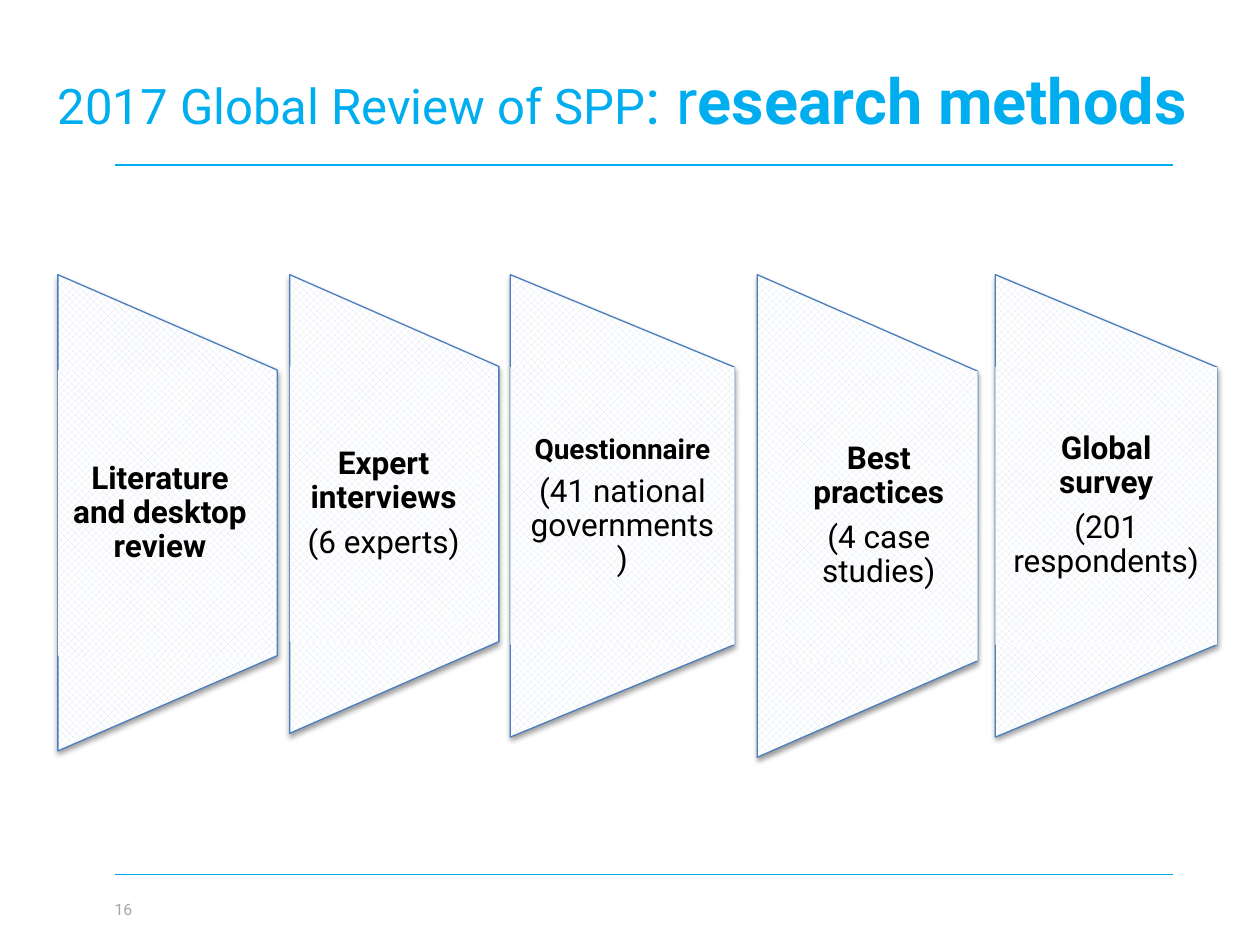
import pptx
import pptx.util
import pptx.dml.color
import pptx.enum.dml
import pptx.enum.shapes
import pptx.enum.text
import lxml.etree
from dataclasses import dataclass
from pptx.util import Inches


@dataclass(frozen=True)
class Theme:
    font: str = "Roboto"
    accent: str = "00AEEF"
    outline: str = "4B7EBC"
    pattern: str = "DCE6F2"
    paper: str = "FFFFFF"
    ink: str = "000000"
    muted: str = "A6A6A6"
    title_size: int = 28
    emphasis_size: int = 36
    label_size: int = 18
    small_label_size: int = 16
    number_size: int = 9


def rgb(value):
    return pptx.dml.color.RGBColor.from_string(value)


class SlideBuilder:
    def __init__(self, page, theme):
        self.page = page
        self.theme = theme

    def style(self, font, size, color, bold=False):
        font.name = self.theme.font
        font.size = pptx.util.Pt(size)
        font.bold = bold
        font.color.rgb = rgb(color)

    def frame(self, box, anchor, side, edge):
        frame = box.text_frame
        frame.word_wrap = True
        frame.auto_size = pptx.enum.text.MSO_AUTO_SIZE.NONE
        frame.vertical_anchor = anchor
        frame.margin_left = frame.margin_right = Inches(side)
        frame.margin_top = frame.margin_bottom = Inches(edge)
        return frame

    def title(self, spans):
        box = self.page.shapes.title
        box.left, box.top = Inches(0.46), Inches(0.33)
        box.width, box.height = Inches(9.39), Inches(1.31)
        frame = self.frame(box, pptx.enum.text.MSO_ANCHOR.TOP, 0, 0.16)
        para = frame.paragraphs[0]
        para.alignment = pptx.enum.text.PP_ALIGN.LEFT
        for text, size, bold in spans:
            span = para.add_run()
            span.text = text
            self.style(span.font, size, self.theme.accent, bold)

    def rule(self, top):
        line = self.page.shapes.add_connector(
            pptx.enum.shapes.MSO_CONNECTOR.STRAIGHT,
            Inches(0.91), Inches(top), Inches(9.31), Inches(top))
        line.line.color.rgb = rgb(self.theme.accent)
        line.line.width = pptx.util.Pt(1)
        lxml.etree.SubElement(line._element.spPr, pptx.oxml.ns.qn("a:effectLst"))

    def page_number(self, text):
        box = self.page.shapes.add_textbox(
            Inches(0.91), Inches(6.94), Inches(8.4), Inches(0.56))
        frame = self.frame(box, pptx.enum.text.MSO_ANCHOR.MIDDLE, 0, 0.05)
        para = frame.paragraphs[0]
        para.text = text
        self.style(para.font, self.theme.number_size, self.theme.muted)

    def patterned(self, shape):
        shape.shadow.inherit = False
        shape.fill.patterned()
        shape.fill.pattern = pptx.enum.dml.MSO_PATTERN.SOLID_DIAMOND
        shape.fill.fore_color.rgb = rgb(self.theme.pattern)
        shape.fill.back_color.rgb = rgb(self.theme.paper)

    def drop_shadow(self, shape):
        qn = pptx.oxml.ns.qn
        effects = shape._element.spPr.find(qn("a:effectLst"))
        shadow = lxml.etree.SubElement(
            effects, qn("a:outerShdw"), blurRad=str(pptx.util.Pt(3.1)),
            dist=str(pptx.util.Pt(1.6)), dir="5400000", rotWithShape="0")
        color = lxml.etree.SubElement(shadow, qn("a:srgbClr"), val=self.theme.ink)
        lxml.etree.SubElement(color, qn("a:alpha"), val="38000")

    def panel(self, left, width, height, text_left, text_width, labels):
        top = 2.18
        kinds = pptx.enum.shapes.MSO_SHAPE
        shapes = self.page.shapes.add_group_shape().shapes
        shift = (height - width) / 2
        body = shapes.add_shape(
            kinds.FLOWCHART_MANUAL_OPERATION, Inches(left - shift),
            Inches(top + shift), Inches(height), Inches(width))
        body.rotation = 270
        self.patterned(body)
        body.line.color.rgb = rgb(self.theme.outline)
        body.line.width = pptx.util.Pt(0.75)
        self.drop_shadow(body)

        box = shapes.add_shape(
            kinds.RECTANGLE, Inches(text_left), Inches(top + height / 5),
            Inches(text_width), Inches(height * 3 / 5))
        self.patterned(box)
        box.line.fill.background()
        frame = self.frame(box, pptx.enum.text.MSO_ANCHOR.MIDDLE, 0.12, 0)
        for index, (text, size, bold) in enumerate(labels):
            para = frame.add_paragraph() if index else frame.paragraphs[0]
            para.text = text
            para.alignment = pptx.enum.text.PP_ALIGN.CENTER
            para.line_spacing = 0.9
            para.space_after = pptx.util.Pt(size * 0.35)
            self.style(para.font, size, self.theme.ink, bold)


def main():
    deck = pptx.Presentation()
    deck.slide_width, deck.slide_height = Inches(10), Inches(7.5)
    theme = Theme()
    page = deck.slides.add_slide(deck.slide_layouts[5])
    builder = SlideBuilder(page, theme)

    builder.page_number("16")
    for top in (1.31, 6.94):
        builder.rule(top)
    builder.title([
        ("2017 Global Review of SPP", theme.title_size, False),
        (": r", theme.emphasis_size, False),
        ("esearch methods", theme.emphasis_size, True),
    ])

    large, small = theme.label_size, theme.small_label_size
    methods = [
        (0.46, 1.74, 3.78, 0.46, 1.62,
         [("Literature and desktop review", large, True)]),
        (2.3, 1.66, 3.64, 2.3, 1.49,
         [("Expert interviews", large, True), ("(6 experts)", large, False)]),
        (4.05, 1.78, 3.67, 4.05, 1.78,
         [("Questionnaire", small, True),
          ("(41 national governments)", large, False)]),
        (6.01, 1.75, 3.83, 6.19, 1.57,
         [("Best practices", large, True), ("(4 case studies)", large, False)]),
        (7.9, 1.76, 3.67, 7.9, 1.76,
         [("Global survey", large, True), ("(201 respondents)", large, False)]),
    ]
    for method in methods:
        builder.panel(*method)
    deck.save("out.pptx")


if __name__ == "__main__":
    main()
